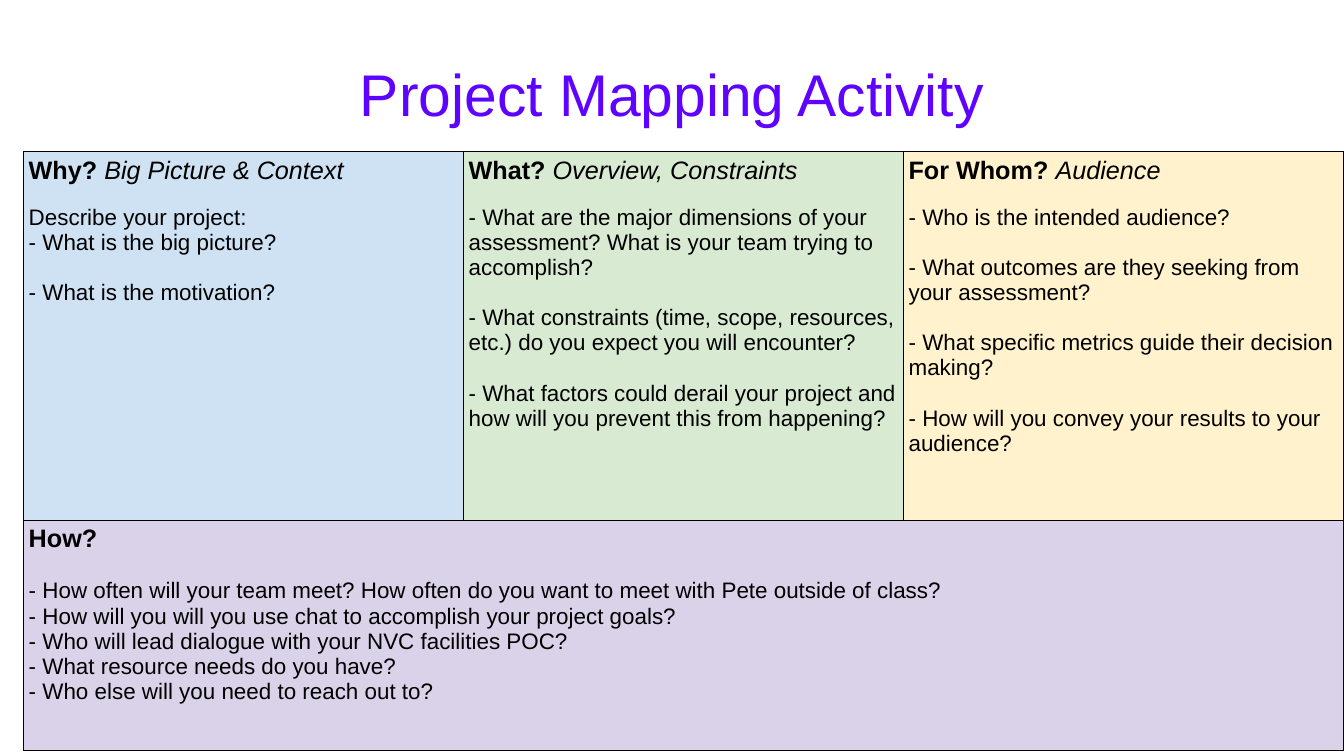
from lxml import etree
from pptx import Presentation
from pptx.dml.color import RGBColor
from pptx.enum import text
from pptx.oxml import ns
from pptx.util import Inches, Pt

COLORS = {
    "title": "5E03FF",
    "text": "000000",
    "border": "000000",
    "why": "CFE2F3",
    "what": "D9EAD3",
    "whom": "FFF2CC",
    "how": "D9D2E9",
}
FONT = "Arial"
HEAD_GAP = 29  # points between a heading and its prompts
LINE_GAP = 36  # points of one open line between prompts

# Each prompt is (text, space before in points)
TOP_ROW = [
    ("why", "Why? ", "Big Picture & Context", [
        ("Describe your project:", HEAD_GAP),
        ("- What is the big picture?", 0),
        ("- What is the motivation?", LINE_GAP),
    ]),
    ("what", "What? ", "Overview, Constraints", [
        ("- What are the major dimensions of your assessment? "
         "What is your team trying to accomplish?", HEAD_GAP),
        ("- What constraints (time, scope, resources, etc.) "
         "do you expect you will encounter?", LINE_GAP),
        ("- What factors could derail your project and "
         "how will you prevent this from happening?", LINE_GAP),
    ]),
    ("whom", "For Whom? ", "Audience", [
        ("- Who is the intended audience?", HEAD_GAP),
        ("- What outcomes are they seeking from your assessment?", LINE_GAP),
        ("- What specific metrics guide their decision making?", LINE_GAP),
        ("- How will you convey your results to your audience?", LINE_GAP),
    ]),
]
HOW = ("how", "How?", "", [
    ("- How often will your team meet? "
     "How often do you want to meet with Pete outside of class?", LINE_GAP),
    ("- How will you will you use chat to accomplish your project goals?", 0),
    ("- Who will lead dialogue with your NVC facilities POC?", 0),
    ("- What resource needs do you have?", 0),
    ("- Who else will you need to reach out to?", 0),
])


def add_run(p, content, size=32, color="text", bold=False, italic=False):
    r = p.add_run()
    r.text = content
    r.font.name = FONT
    r.font.size = Pt(size)
    r.font.bold = bold
    r.font.italic = italic
    r.font.color.rgb = RGBColor.from_string(COLORS[color])


def set_margins(box, inches):
    box.margin_left = box.margin_right = Inches(inches)
    box.margin_top = box.margin_bottom = Inches(inches)


def set_borders(cell, width=0.75):
    props = cell._tc.get_or_add_tcPr()
    for side in ("lnL", "lnR", "lnT", "lnB"):
        line = etree.SubElement(props, ns.qn(f"a:{side}"), w=str(Pt(width)))
        fill = etree.SubElement(line, ns.qn("a:solidFill"))
        etree.SubElement(fill, ns.qn("a:srgbClr"), val=COLORS["border"])


def style_cell(cell, color):
    set_borders(cell)
    cell.fill.solid()
    cell.fill.fore_color.rgb = RGBColor.from_string(COLORS[color])
    set_margins(cell, 0.1)


def fill_cell(cell, heading, subtitle, prompts):
    tf = cell.text_frame
    p = tf.paragraphs[0]
    add_run(p, heading, size=36, bold=True)
    if subtitle:
        add_run(p, subtitle, size=36, italic=True)
    for prompt, gap in prompts:
        p = tf.add_paragraph()
        p.space_before = Pt(gap)
        add_run(p, prompt)


def add_title(s, content):
    sp = s.shapes.title
    sp.left, sp.top = Inches(1.39), Inches(0.9)
    sp.width, sp.height = Inches(23.89), Inches(1.69)
    tf = sp.text_frame
    tf.auto_size = text.MSO_AUTO_SIZE.NONE
    tf.vertical_anchor = text.MSO_ANCHOR.BOTTOM
    set_margins(tf, 0.06)
    p = tf.paragraphs[0]
    p.alignment = text.PP_ALIGN.CENTER
    p.line_spacing = 0.8
    add_run(p, content, size=84, color="title")


def add_mapping_table(s):
    table = s.shapes.add_table(
        2, 3, Inches(0.47), Inches(3), Inches(26.2), Inches(11.89)).table
    table.first_row = table.horz_banding = False
    for column in table.columns:
        column.width = Inches(8.73)
    for row, height in zip(table.rows, (7.32, 4.57)):
        row.height = Inches(height)

    # Three questions across the top
    for col, (color, *content) in enumerate(TOP_ROW):
        style_cell(table.cell(0, col), color)
        fill_cell(table.cell(0, col), *content)

    # One full-width question below
    color, *content = HOW
    for col in range(3):
        style_cell(table.cell(1, col), color)
    table.cell(1, 0).merge(table.cell(1, 2))
    fill_cell(table.cell(1, 0), *content)


def main():
    prs = Presentation()
    prs.slide_width, prs.slide_height = Inches(26.67), Inches(15)
    s = prs.slides.add_slide(prs.slide_layouts[5])
    add_title(s, "Project Mapping Activity")
    add_mapping_table(s)
    prs.save("out.pptx")


if __name__ == "__main__":
    main()
